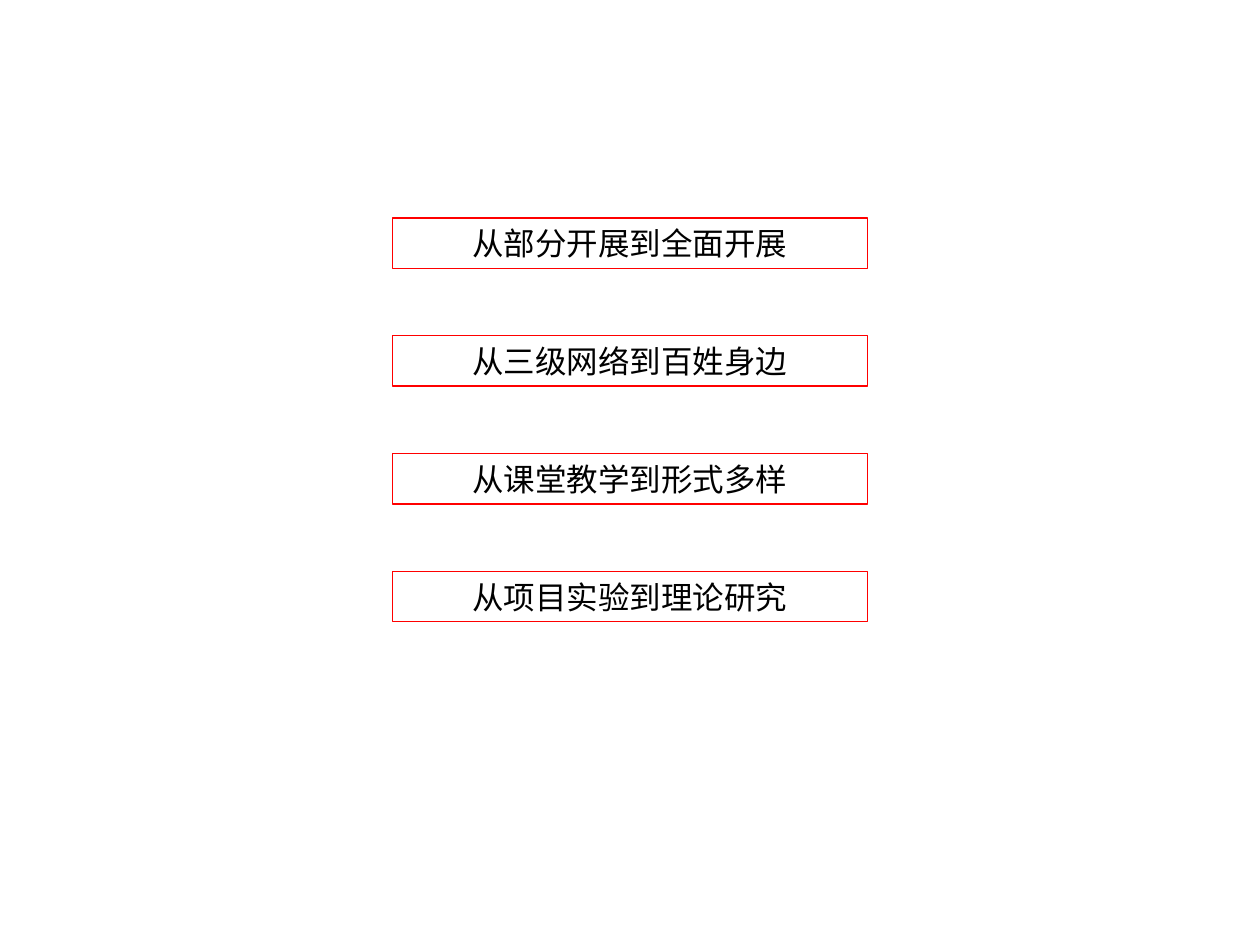
"""Build a slide with four evenly spaced, outlined statements."""
from dataclasses import dataclass

from lxml import etree
from pptx import Presentation
from pptx.dml.color import RGBColor
from pptx.enum.shapes import MSO_SHAPE
from pptx.enum.text import MSO_ANCHOR, PP_ALIGN
from pptx.oxml.ns import qn
from pptx.util import Inches, Pt

RECTANGLE = MSO_SHAPE.RECTANGLE
CENTER = PP_ALIGN.CENTER
MIDDLE = MSO_ANCHOR.MIDDLE

SLIDE_WIDTH, SLIDE_HEIGHT = 10, 7.5
STATEMENT_WIDTH, STATEMENT_HEIGHT = 3.77, 0.4
FIRST_TOP, ROW_PITCH = 1.73, 0.935
FONT = "Noto Sans CJK SC"
FONT_SIZE = 18
RED, BLACK = "FF0000", "000000"


@dataclass(frozen=True)
class Statement:
    row: int
    wording: str


STATEMENTS = [
    Statement(row, wording)
    for row, wording in enumerate((
        "从部分开展到全面开展",
        "从三级网络到百姓身边",
        "从课堂教学到形式多样",
        "从项目实验到理论研究",
    ))
]


def color(value: str) -> RGBColor:
    return RGBColor.from_string(value)


def draw_statement(slide, statement: Statement) -> None:
    box = slide.shapes.add_shape(
        RECTANGLE,
        Inches((SLIDE_WIDTH - STATEMENT_WIDTH) / 2),
        Inches(FIRST_TOP + statement.row * ROW_PITCH),
        Inches(STATEMENT_WIDTH),
        Inches(STATEMENT_HEIGHT),
    )
    box.shadow.inherit = False
    box.fill.background()
    box.line.color.rgb = color(RED)
    box.line.width = Pt(0.75)

    frame = box.text_frame
    frame.word_wrap = True
    frame.vertical_anchor = MIDDLE
    paragraph = frame.paragraphs[0]
    paragraph.alignment = CENTER
    run = paragraph.add_run()
    run.text = statement.wording
    run.font.size = Pt(FONT_SIZE)
    run.font.color.rgb = color(BLACK)
    run.font.name = FONT
    etree.SubElement(run._r.get_or_add_rPr(), qn("a:ea"), typeface=FONT)


def main() -> None:
    presentation = Presentation()
    presentation.slide_width = Inches(SLIDE_WIDTH)
    presentation.slide_height = Inches(SLIDE_HEIGHT)
    slide = presentation.slides.add_slide(presentation.slide_layouts[6])
    for statement in STATEMENTS:
        draw_statement(slide, statement)
    presentation.save("out.pptx")


if __name__ == "__main__":
    main()
